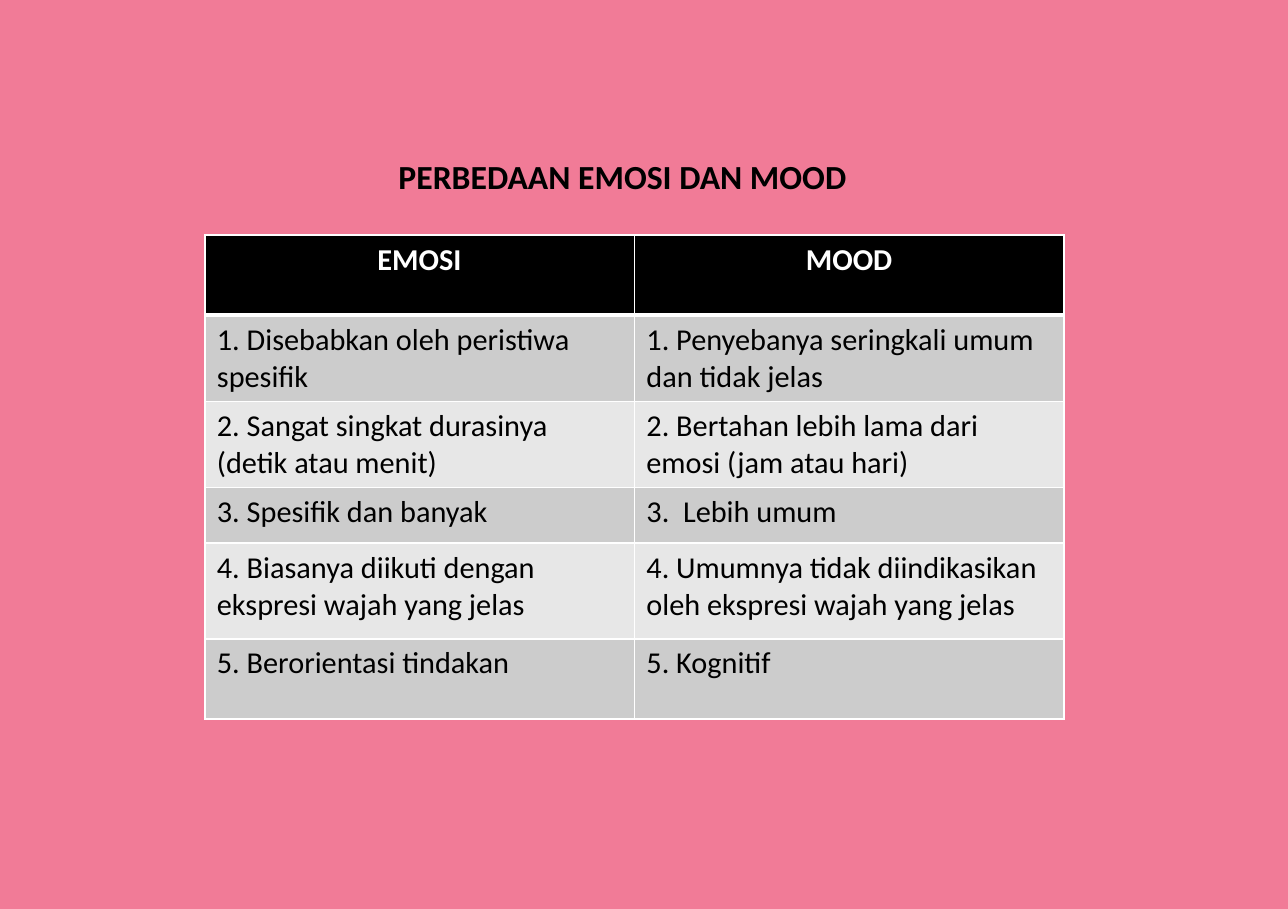
from dataclasses import dataclass
from typing import Any

from lxml import etree
from pptx import Presentation
from pptx import util as u
from pptx.dml.color import RGBColor
from pptx.enum import text
from pptx.oxml import ns

PINK = RGBColor(0xF1, 0x7B, 0x97)
BLACK = RGBColor(0x00, 0x00, 0x00)
WHITE = RGBColor(0xFF, 0xFF, 0xFF)
DARK_BAND = RGBColor(0xCC, 0xCC, 0xCC)
LIGHT_BAND = RGBColor(0xE7, 0xE7, 0xE7)

TITLE_FONT = {"name": "Calibri", "size": u.Pt(20), "bold": True}
HEADER_FONT = {"name": "Calibri", "size": u.Pt(18), "bold": True}
BODY_FONT = HEADER_FONT | {"bold": False}

THIN, THICK = 1, 3


@dataclass
class Row:
    emotion: str
    mood: str
    height: float


ROWS = [
    Row("EMOSI", "MOOD", 0.66),
    Row("1. Disebabkan oleh peristiwa spesifik",
        "1. Penyebanya seringkali umum dan tidak jelas", 0.66),
    Row("2. Sangat singkat durasinya (detik atau menit)",
        "2. Bertahan lebih lama dari emosi (jam atau hari)", 0.66),
    Row("3. Spesifik dan banyak", "3.  Lebih umum", 0.46),
    Row("4. Biasanya diikuti dengan ekspresi wajah yang jelas",
        "4. Umumnya tidak diindikasikan oleh ekspresi wajah yang jelas", 0.79),
    Row("5. Berorientasi tindakan", "5. Kognitif", 0.66),
]


def write(para: Any, words: str, font: dict[str, Any], color: RGBColor) -> None:
    span = para.add_run()
    span.text = words
    for name, value in font.items():
        setattr(span.font, name, value)
    span.font.color.rgb = color


def add_borders(cell: Any, top: int, bottom: int) -> None:
    """Borders come before the fill in the cell properties."""
    properties = cell._tc.get_or_add_tcPr()
    widths = {"a:lnL": THIN, "a:lnR": THIN, "a:lnT": top, "a:lnB": bottom}
    for index, (tag, width) in enumerate(widths.items()):
        line = etree.Element(ns.qn(tag), w=str(u.Pt(width)))
        fill = etree.SubElement(line, ns.qn("a:solidFill"))
        etree.SubElement(fill, ns.qn("a:srgbClr"), val=str(WHITE))
        properties.insert(index, line)


def add_title(page: Any) -> None:
    box = page.shapes.add_textbox(u.Inches(3.19), u.Inches(1.24), u.Inches(3.93), u.Inches(0.44))
    box.text_frame.word_wrap = False
    box.text_frame.auto_size = text.MSO_AUTO_SIZE.SHAPE_TO_FIT_TEXT
    write(box.text_frame.paragraphs[0], "PERBEDAAN EMOSI DAN MOOD", TITLE_FONT, BLACK)


def add_comparison(page: Any, rows: list[Row]) -> None:
    height = sum(row.height for row in rows)
    table = page.shapes.add_table(len(rows), 2, u.Inches(1.69), u.Inches(1.94),
                                  u.Inches(7.09), u.Inches(height)).table
    for index, row in enumerate(rows):
        table.rows[index].height = u.Inches(row.height)
        header = index == 0
        band = BLACK if header else DARK_BAND if index % 2 else LIGHT_BAND
        for column, words in enumerate((row.emotion, row.mood)):
            cell = table.cell(index, column)
            cell.fill.solid()
            cell.fill.fore_color.rgb = band
            add_borders(cell, THICK if index == 1 else THIN, THICK if header else THIN)
            para = cell.text_frame.paragraphs[0]
            if header:
                para.alignment = text.PP_ALIGN.CENTER
            write(para, words, HEADER_FONT if header else BODY_FONT, WHITE if header else BLACK)


def main() -> None:
    deck = Presentation()
    deck.slide_width, deck.slide_height = u.Inches(10.63), u.Inches(7.5)
    page = deck.slides.add_slide(deck.slide_layouts[6])

    # Background
    page.background.fill.solid()
    page.background.fill.fore_color.rgb = PINK

    # Table and title
    add_comparison(page, ROWS)
    add_title(page)

    deck.save("out.pptx")


if __name__ == "__main__":
    main()
